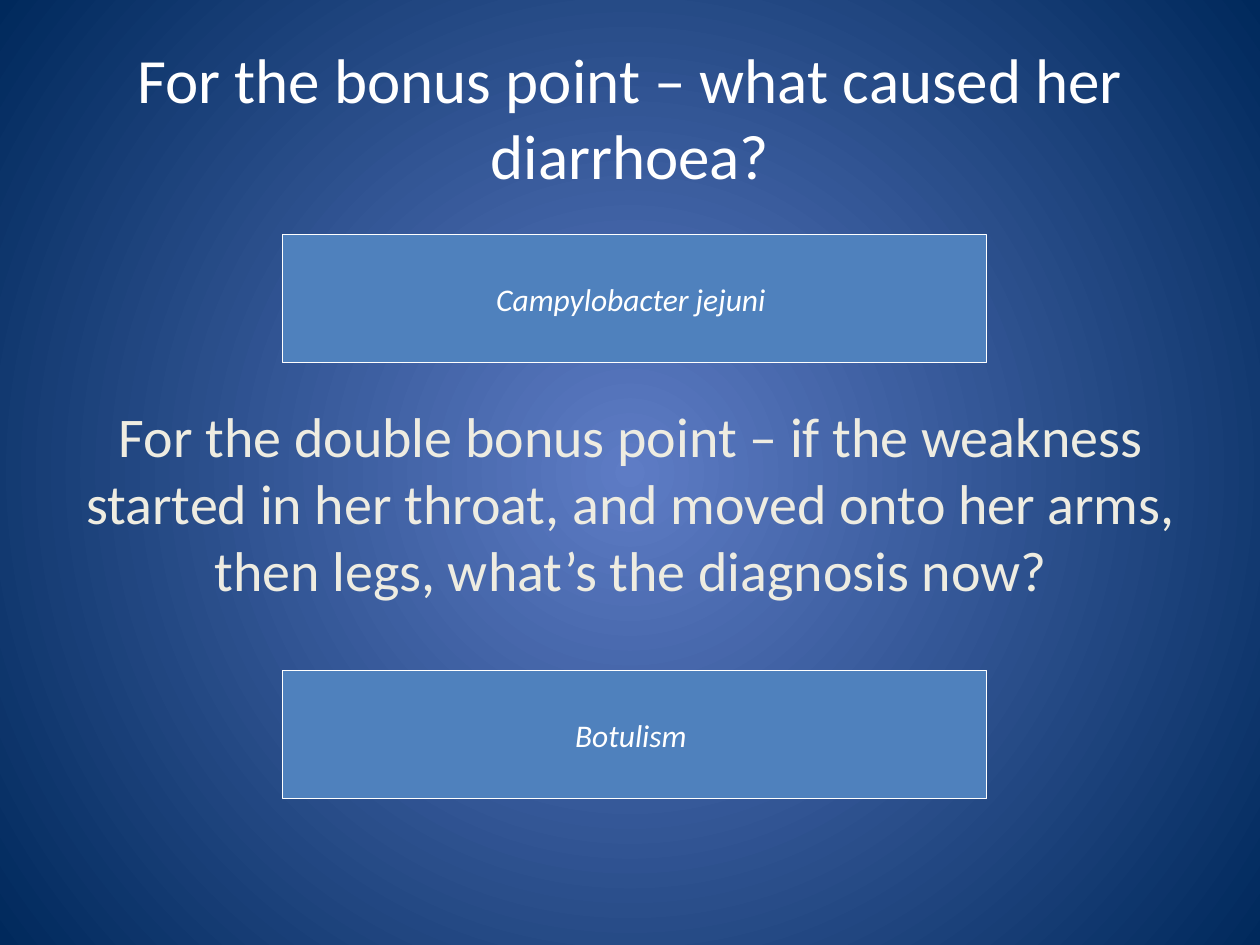
from lxml import etree
from pptx import Presentation
from pptx.dml.color import RGBColor
from pptx.enum.shapes import MSO_SHAPE
from pptx.enum.text import MSO_ANCHOR, MSO_AUTO_SIZE, PP_ALIGN
from pptx.oxml.ns import qn
from pptx.util import Inches, Pt

RECTANGLE = MSO_SHAPE.RECTANGLE
MIDDLE = MSO_ANCHOR.MIDDLE
CENTER = PP_ALIGN.CENTER
NO_AUTOFIT = MSO_AUTO_SIZE.NONE

FONT = "Calibri"
WHITE, CREAM, BLUE = "FFFFFF", "EEECE1", "4F81BD"
GRADIENT = ("5E7CC5", "00295C")  # centre, edge

TITLE = "For the bonus point – what caused her diarrhoea?"
TITLE_PLACE = (0.5, 0.3, 9, 1.25)
QUESTION = ("For the double bonus point – if the weakness started in her throat, "
            "and moved onto her arms, then legs, what’s the diagnosis now?")
QUESTION_PLACE = (0.51, 3.36, 9, 1.25)
ANSWERS = [("Campylobacter jejuni ", 1.86), ("Botulism ", 5.32)]  # text, top
ANSWER_LEFT, ANSWER_WIDTH, ANSWER_HEIGHT = 2.24, 5.59, 1.02


def color(value):
    return RGBColor.from_string(value)


def inches(place):
    return [Inches(length) for length in place]


def write(box, text, size, fill=WHITE, italic=False, wrap=True):
    frame = box.text_frame
    frame.auto_size = NO_AUTOFIT
    frame.word_wrap = wrap
    frame.vertical_anchor = MIDDLE
    para = frame.paragraphs[0]
    para.alignment = CENTER
    span = para.add_run()
    span.text = text
    span.font.name = FONT
    span.font.size = Pt(size)
    span.font.italic = italic
    span.font.color.rgb = color(fill)


def paint_background(page):
    """Fill the page with a gradient that spreads in circles from the centre."""
    fill = page.background.fill
    fill.gradient()
    for stop, value in zip(fill.gradient_stops, GRADIENT):
        stop.color.rgb = color(value)
    gradient = page.element.find(".//" + qn("a:gradFill"))
    gradient.remove(gradient.find(qn("a:lin")))
    circle = etree.SubElement(gradient, qn("a:path"), {"path": "circle"})
    etree.SubElement(circle, qn("a:fillToRect"), dict.fromkeys("ltrb", "50000"))


def add_answer(page, text, top):
    box = page.shapes.add_shape(
        RECTANGLE, *inches((ANSWER_LEFT, top, ANSWER_WIDTH, ANSWER_HEIGHT)))
    box.shadow.inherit = False
    box.fill.solid()
    box.fill.fore_color.rgb = color(BLUE)
    box.line.color.rgb = color(WHITE)
    box.line.width = Pt(0.75)
    write(box, text, 18, italic=True, wrap=False)


def main():
    deck = Presentation()
    deck.slide_width, deck.slide_height = Inches(10), Inches(7.5)
    page = deck.slides.add_slide(deck.slide_layouts.get_by_name("Title Only"))
    paint_background(page)

    title = page.shapes.title
    title.left, title.top, title.width, title.height = inches(TITLE_PLACE)
    write(title, TITLE, 36)

    question = page.shapes.add_textbox(*inches(QUESTION_PLACE))
    write(question, QUESTION, 32, fill=CREAM)

    for text, top in ANSWERS:
        add_answer(page, text, top)

    deck.save("out.pptx")


if __name__ == "__main__":
    main()
